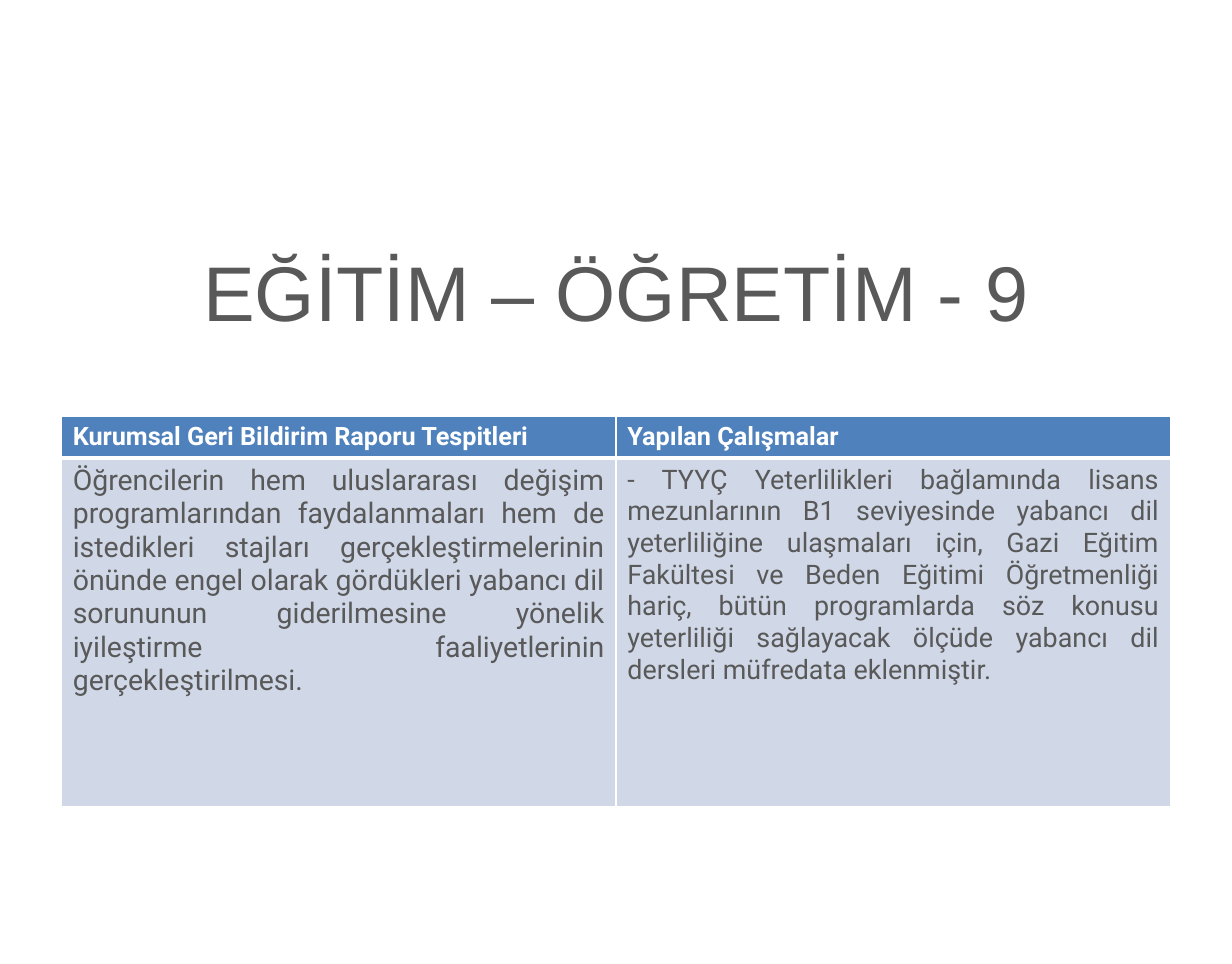
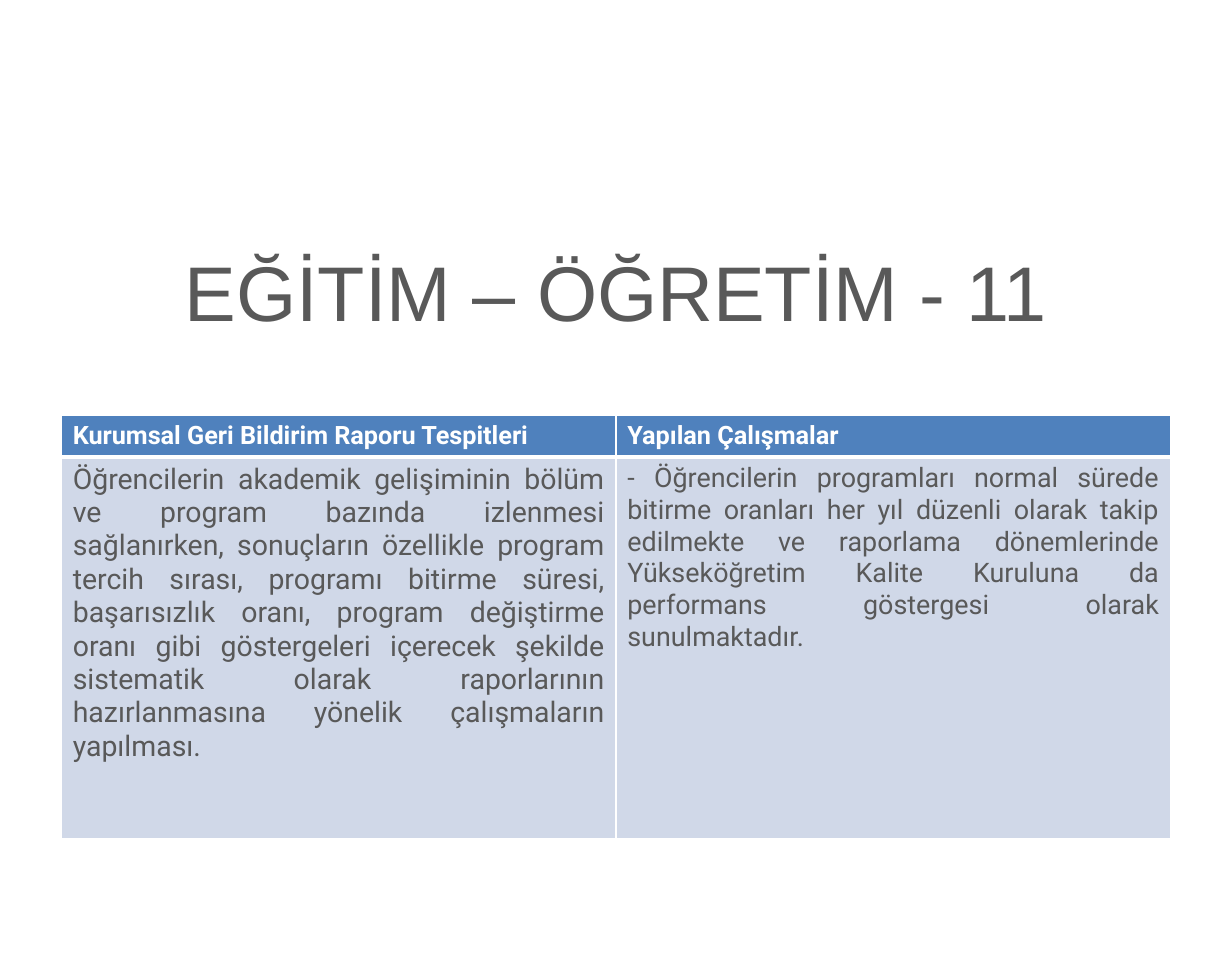
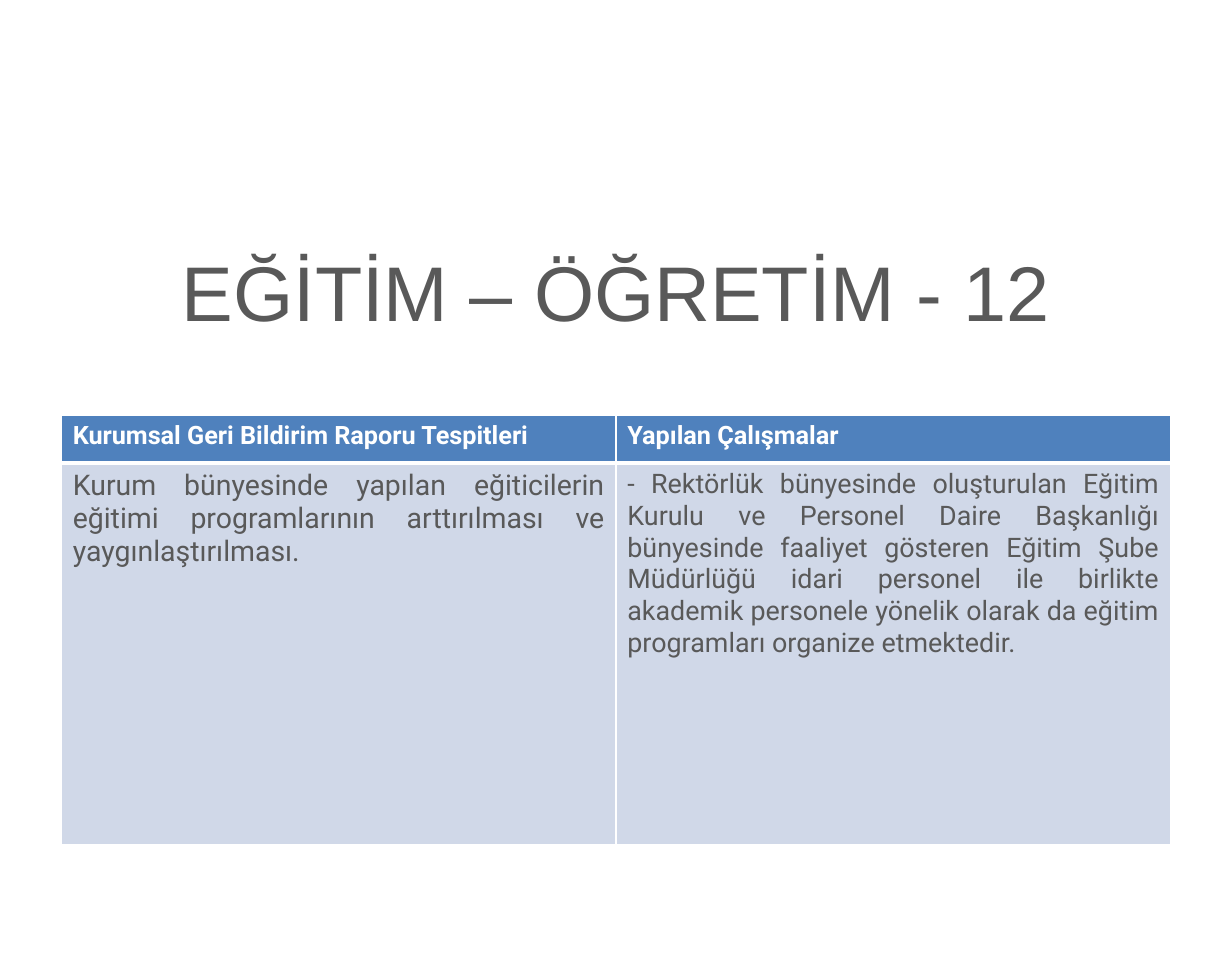
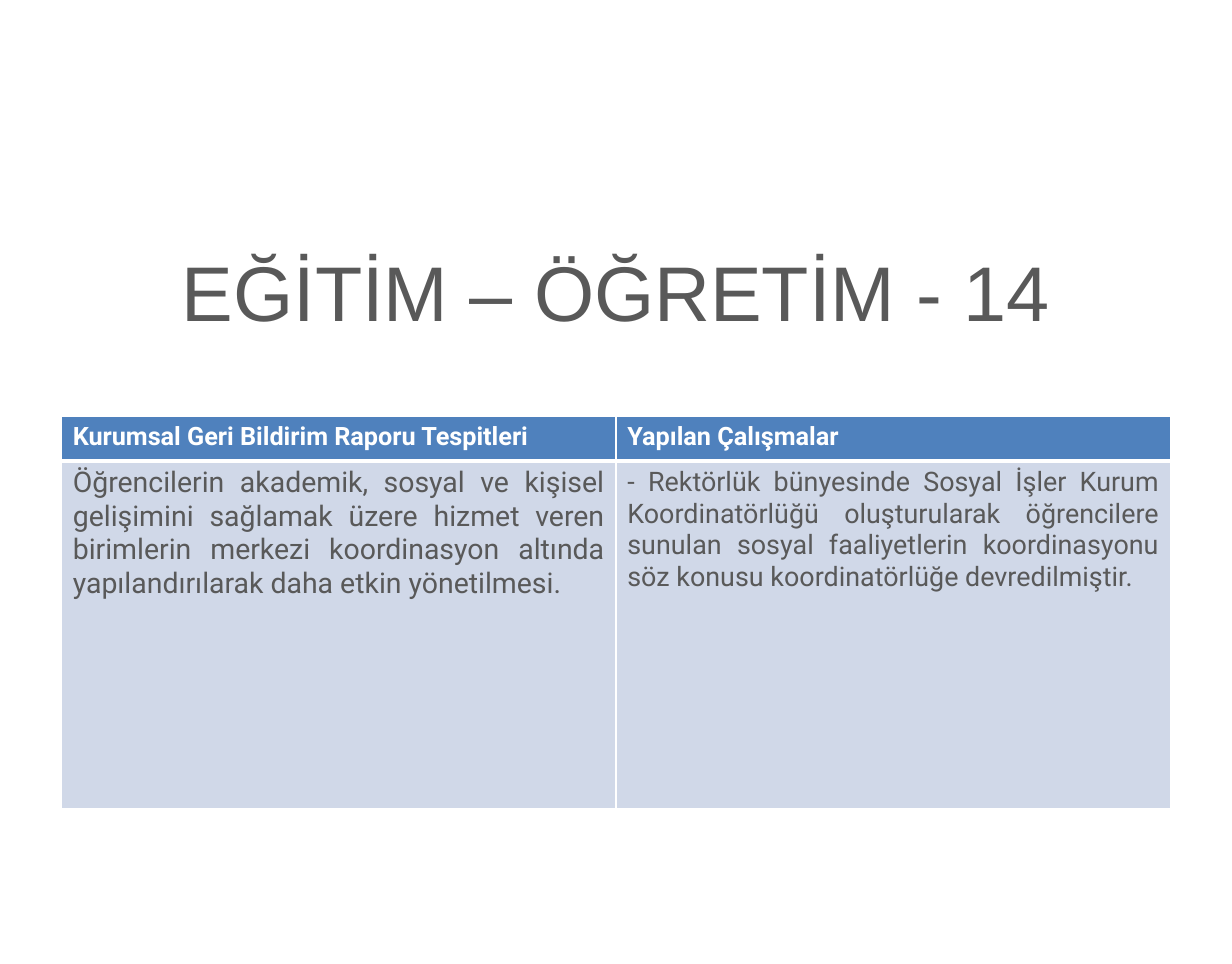
from pptx import Presentation
from pptx.dml.color import RGBColor
from pptx.enum.text import MSO_ANCHOR, PP_ALIGN
from pptx.oxml.ns import qn
from pptx.util import Inches, Pt
from lxml.etree import SubElement

TITLE = "EĞİTİM – ÖĞRETİM - {}"
HEADERS = ("Kurumsal Geri Bildirim Raporu Tespitleri", "Yapılan Çalışmalar")
SLIDES = [
    {
        "number": 9, "top": 3.66, "rows": (0.36, 3.06),
        "finding": "Öğrencilerin hem uluslararası değişim programlarından faydalanmaları hem de "
                   "istedikleri stajları gerçekleştirmelerinin önünde engel olarak gördükleri "
                   "yabancı dil sorununun giderilmesine yönelik iyileştirme faaliyetlerinin "
                   "gerçekleştirilmesi.",
        "action": "- TYYÇ Yeterlilikleri bağlamında lisans mezunlarının B1 seviyesinde yabancı dil "
                  "yeterliliğine ulaşmaları için, Gazi Eğitim Fakültesi ve Beden Eğitimi "
                  "Öğretmenliği hariç, bütün programlarda söz konusu yeterliliği sağlayacak ölçüde "
                  "yabancı dil dersleri müfredata eklenmiştir.",
    },
    {
        "number": 11, "top": 3.65, "rows": (0.36, 3.35),
        "finding": "Öğrencilerin akademik gelişiminin bölüm ve program bazında izlenmesi "
                   "sağlanırken, sonuçların özellikle program tercih sırası, programı bitirme "
                   "süresi, başarısızlık oranı, program değiştirme oranı gibi göstergeleri içerecek "
                   "şekilde sistematik olarak raporlarının hazırlanmasına yönelik çalışmaların "
                   "yapılması.",
        "action": "- Öğrencilerin programları normal sürede bitirme oranları her yıl düzenli olarak "
                  "takip edilmekte ve raporlama dönemlerinde Yükseköğretim Kalite Kuruluna da "
                  "performans göstergesi olarak sunulmaktadır.",
    },
    {
        "number": 12, "top": 3.65, "rows": (0.42, 3.35),
        "finding": "Kurum bünyesinde yapılan eğiticilerin eğitimi programlarının arttırılması ve "
                   "yaygınlaştırılması.",
        "action": "- Rektörlük bünyesinde oluşturulan Eğitim Kurulu ve Personel Daire Başkanlığı "
                  "bünyesinde faaliyet gösteren Eğitim Şube Müdürlüğü idari personel ile birlikte "
                  "akademik personele yönelik olarak da eğitim programları organize etmektedir.",
    },
    {
        "number": 14, "top": 3.66, "rows": (0.39, 3.06),
        "finding": "Öğrencilerin akademik, sosyal ve kişisel gelişimini sağlamak üzere hizmet veren "
                   "birimlerin merkezi koordinasyon altında yapılandırılarak daha etkin yönetilmesi.",
        "action": "- Rektörlük bünyesinde Sosyal İşler Kurum Koordinatörlüğü oluşturularak "
                  "öğrencilere sunulan sosyal faaliyetlerin koordinasyonu söz konusu "
                  "koordinatörlüğe devredilmiştir.",
    },
]

WHITE, GREY, BLUE, PALE = "FFFFFF", "595959", "4F81BD", "D0D8E8"
LEFT, WIDTH = Inches(0.54), Inches(9.75)
TITLE_TOP, TITLE_HEIGHT = Inches(2.03), Inches(1.41)
HEADER_SIZES, BODY_SIZES = (16, 16), (18, 17)
THIN, THICK = 1, 3


def rgb(value):
    return RGBColor.from_string(value)


def write(tf, text, font, size, color, align, bold=False):
    tf.text = text
    p = tf.paragraphs[0]
    p.alignment = align
    f = p.runs[0].font
    f.name, f.size, f.bold = font, Pt(size), bold
    f.color.rgb = rgb(color)


def set_borders(cell, top, bottom):
    props = cell._tc.get_or_add_tcPr()
    widths = {"a:lnL": THIN, "a:lnR": THIN, "a:lnT": top, "a:lnB": bottom}
    for tag, width in widths.items():
        line = SubElement(props, qn(tag), w=str(Pt(width)))
        fill = SubElement(line, qn("a:solidFill"))
        SubElement(fill, qn("a:srgbClr"), val=WHITE)


def add_title(s, number):
    tf = s.shapes.add_textbox(LEFT, TITLE_TOP, WIDTH, TITLE_HEIGHT).text_frame
    tf.word_wrap = True
    tf.vertical_anchor = MSO_ANCHOR.TOP
    tf.margin_top = Inches(0.11)
    write(tf, TITLE.format(number), "Arial", 49, GREY, PP_ALIGN.CENTER)


def add_findings_table(s, item):
    heights = [Inches(h) for h in item["rows"]]
    table = s.shapes.add_table(2, 2, LEFT, Inches(item["top"]), WIDTH, sum(heights)).table
    table.horz_banding = False
    for row, height in zip(table.rows, heights):
        row.height = height
    rows = [
        (HEADERS, HEADER_SIZES, WHITE, BLUE, PP_ALIGN.LEFT, True, THIN, THICK),
        ((item["finding"], item["action"]), BODY_SIZES, GREY, PALE, PP_ALIGN.JUSTIFY, False, THICK, THIN),
    ]
    for row, (texts, sizes, color, fill, align, bold, top, bottom) in zip(table.rows, rows):
        for cell, text, size in zip(row.cells, texts, sizes):
            write(cell.text_frame, text, "Roboto", size, color, align, bold)
            set_borders(cell, top, bottom)
            cell.fill.solid()
            cell.fill.fore_color.rgb = rgb(fill)


def main():
    prs = Presentation()
    prs.slide_width, prs.slide_height = Inches(10.83), Inches(8.47)
    for item in SLIDES:
        s = prs.slides.add_slide(prs.slide_layouts[6])
        add_title(s, item["number"])
        add_findings_table(s, item)
    prs.save("out.pptx")


if __name__ == "__main__":
    main()
